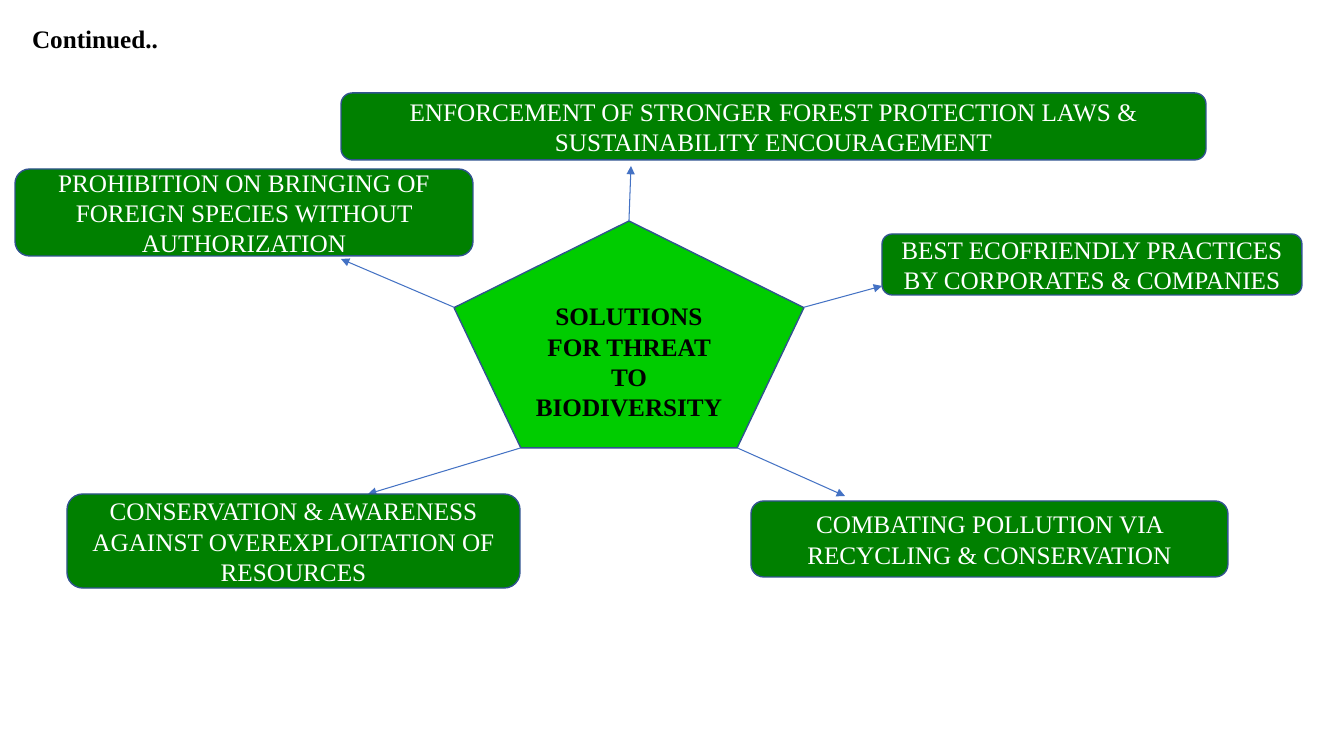
from lxml.etree import SubElement
from pptx import Presentation
from pptx.dml.color import RGBColor
from pptx.enum.shapes import MSO_CONNECTOR, MSO_SHAPE
from pptx.enum.text import MSO_ANCHOR, MSO_AUTO_SIZE, PP_ALIGN
from pptx.oxml.ns import qn
from pptx.util import Emu, Pt

TITLE = "Continued.."
TITLE_BOX = (22, 18, 423, 41)
HUB = "SOLUTIONS FOR THREAT TO BIODIVERSITY"
HUB_BOX = (454, 221, 350, 227)

# Clockwise from the top: text, box (left, top, width, height), arrow tip,
# and pentagon corner as a share of the hub's width and height
SOLUTIONS = [
    ("ENFORCEMENT OF STRONGER FOREST PROTECTION LAWS & SUSTAINABILITY ENCOURAGEMENT",
     (341, 93, 865, 67), (631, 166), (0.5, 0)),
    ("BEST ECOFRIENDLY PRACTICES BY CORPORATES & COMPANIES",
     (882, 234, 420, 61), (882, 286), (1, 0.38)),
    ("COMBATING POLLUTION VIA RECYCLING & CONSERVATION",
     (751, 501, 477, 76), (845, 496), (0.81, 1)),
    ("CONSERVATION & AWARENESS AGAINST OVEREXPLOITATION OF RESOURCES",
     (67, 494, 453, 94), (368, 494), (0.19, 1)),
    ("PROHIBITION ON BRINGING OF FOREIGN SPECIES WITHOUT AUTHORIZATION",
     (15, 169, 458, 87), (341, 259), (0, 0.38)),
]

COLORS = {
    "hub": "00CC00",
    "box": "008000",
    "outline": "31538F",
    "arrow": "4472C4",
    "dark": "000000",
    "light": "FFFFFF",
}
FONT = "Times New Roman"
SLIDE_SIZE = (1344, 756)
EMU_PER_PX = 914400 / 100.8


def px(length):
    return Emu(round(length * EMU_PER_PX))


def color(name):
    return RGBColor.from_string(COLORS[name])


def write_text(shape, text, ink="light", bold=False, align=PP_ALIGN.CENTER,
               anchor=MSO_ANCHOR.MIDDLE):
    frame = shape.text_frame
    frame.word_wrap = True
    frame.auto_size = MSO_AUTO_SIZE.NONE
    frame.vertical_anchor = anchor
    frame.text = text
    paragraph = frame.paragraphs[0]
    paragraph.alignment = align
    paragraph.line_spacing = 1.0
    paragraph.space_before = Pt(0)
    font = paragraph.runs[0].font
    font.name = FONT
    font.size = Pt(18)
    font.bold = bold
    font.color.rgb = color(ink)


def add_block(slide, kind, box, fill):
    shape = slide.shapes.add_shape(kind, *map(px, box))
    shape.shadow.inherit = False
    shape.fill.solid()
    shape.fill.fore_color.rgb = color(fill)
    shape.line.color.rgb = color("outline")
    shape.line.width = Pt(1)
    return shape


def add_arrow(slide, start, end):
    arrow = slide.shapes.add_connector(MSO_CONNECTOR.STRAIGHT, *map(px, start + end))
    arrow.line.color.rgb = color("arrow")
    arrow.line.width = Pt(0.75)
    SubElement(arrow.line._get_or_add_ln(), qn("a:tailEnd"), type="triangle")
    SubElement(arrow._element.spPr, qn("a:effectLst"))


def main():
    presentation = Presentation()
    presentation.slide_width, presentation.slide_height = map(px, SLIDE_SIZE)
    slide = presentation.slides.add_slide(presentation.slide_layouts[5])

    title = slide.shapes.title
    title.left, title.top, title.width, title.height = map(px, TITLE_BOX)
    write_text(title, TITLE, ink="dark", bold=True, align=PP_ALIGN.LEFT,
               anchor=MSO_ANCHOR.TOP)

    hub = add_block(slide, MSO_SHAPE.REGULAR_PENTAGON, HUB_BOX, "hub")
    write_text(hub, HUB, ink="dark", bold=True)

    left, top, width, height = HUB_BOX
    for text, box, tip, (across, down) in SOLUTIONS:
        add_arrow(slide, (left + across * width, top + down * height), tip)
        write_text(add_block(slide, MSO_SHAPE.ROUNDED_RECTANGLE, box, "box"), text)

    presentation.save("out.pptx")


if __name__ == "__main__":
    main()
